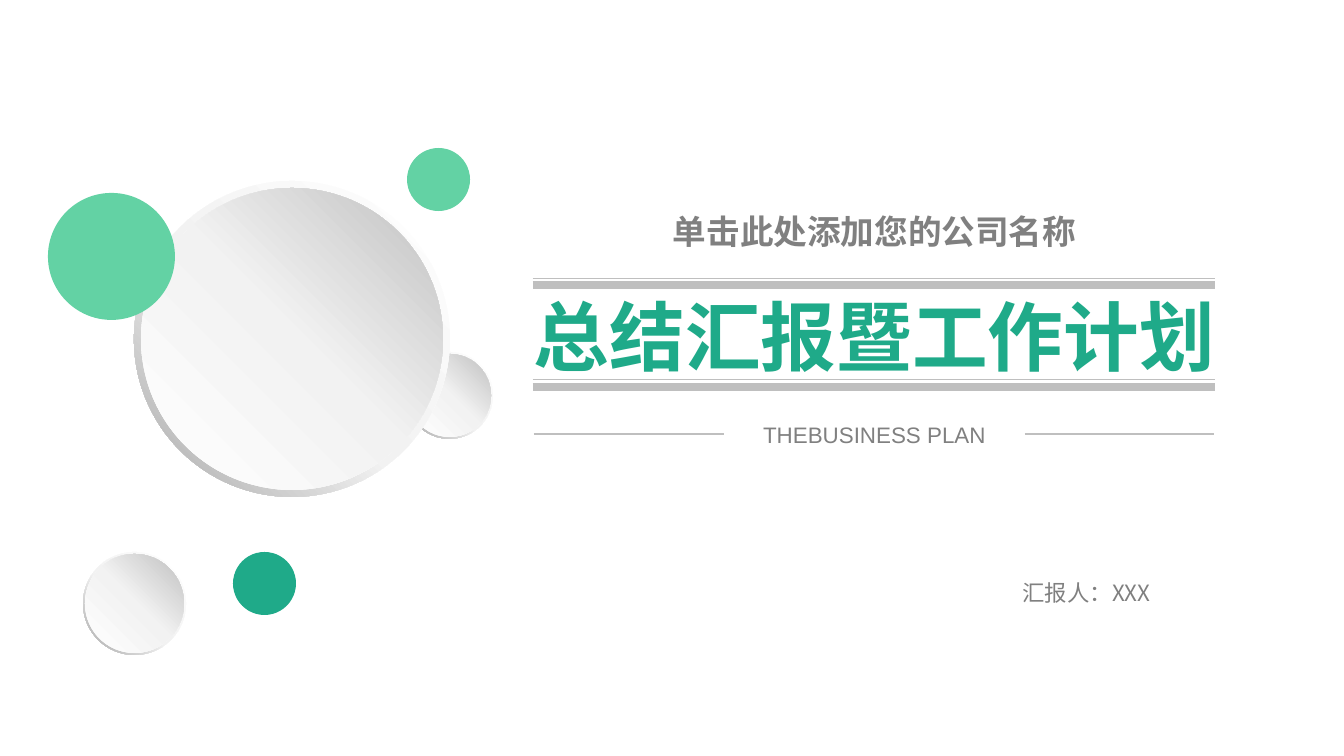
from copy import deepcopy

from pptx import Presentation
from pptx import util as u
from pptx.dml.color import RGBColor
from pptx.enum import shapes, text
from pptx.oxml.ns import qn
from lxml import etree

EMU_PER_PX = 914400 / 134.4
MINT, TEAL, GRAY, SILVER = "63D2A4", "1FAA89", "808080", "BFBFBF"
CJK_FONT = "Noto Sans CJK SC"
RIM_GRADIENT = ([(0, "FFFFFF"), (0.55, "F2F2F2"), (1, "A6A6A6")], 225)
FACE_GRADIENT = ([(0, "FFFFFF"), (0.51, "F2F2F2"), (1, "BFBFBF")], 45)
CIRCLES = [
    (407, 148, 63, MINT),
    (406, 352, 87, None),
    (134, 181, 316, None),
    (48, 193, 127, MINT),
    (83, 552, 103, None),
    (233, 552, 63, TEAL),
]
RULES = [
    (533, 1215, 279, 0.5),
    (533, 1215, 285, 4.5),
    (533, 1215, 380, 0.5),
    (533, 1215, 387, 4.5),
    (534, 724, 434, 1),
    (1025, 1214, 434, 1),
]


def px(length):
    return u.Emu(round(length * EMU_PER_PX))


def rgb(color):
    return RGBColor.from_string(color)


def fill_gradient(fill, gradient):
    stops, angle = gradient
    fill.gradient()
    fill.gradient_angle = angle
    stop_list = fill._fill._gradFill.find(qn("a:gsLst"))
    stop_list.append(deepcopy(stop_list[0]))
    for stop, (position, color) in zip(fill.gradient_stops, stops):
        stop.position = position
        stop.color.rgb = rgb(color)


def add_round(group, kind, left, top, size, color, gradient):
    shape = group.shapes.add_shape(kind, px(left), px(top), px(size), px(size))
    shape.shadow.inherit = False
    shape.line.fill.background()
    if color:
        shape.fill.solid()
        shape.fill.fore_color.rgb = rgb(color)
    else:
        fill_gradient(shape.fill, gradient)
    return shape


def add_circle(slide, left, top, size, color):
    group = slide.shapes.add_group_shape()
    rim = add_round(group, shapes.MSO_SHAPE.DONUT, left, top, size, color, RIM_GRADIENT)
    rim.adjustments[0] = 0.05
    inset = round(size * 0.021)
    add_round(group, shapes.MSO_SHAPE.OVAL, left + inset, top + inset,
              size - 2 * inset, color, FACE_GRADIENT)


def add_rule(slide, start, end, y, width):
    line = slide.shapes.add_connector(
        shapes.MSO_CONNECTOR.STRAIGHT, px(start), px(y), px(end), px(y))
    line.line.color.rgb = rgb(SILVER)
    line.line.width = u.Pt(width)
    etree.SubElement(line._element.spPr, qn("a:effectLst"))


def write_text(shape, words, size, color, font=CJK_FONT, bold=False, wrap=True):
    frame = shape.text_frame
    frame.auto_size = text.MSO_AUTO_SIZE.NONE
    frame.word_wrap = wrap
    frame.vertical_anchor = text.MSO_ANCHOR.MIDDLE
    frame.margin_left = frame.margin_right = 0
    frame.margin_top = frame.margin_bottom = 0
    frame.text = words
    paragraph = frame.paragraphs[0]
    paragraph.alignment = text.PP_ALIGN.CENTER
    paragraph.font.name = font
    paragraph.font.size = u.Pt(size)
    paragraph.font.bold = bold
    paragraph.font.color.rgb = rgb(color)
    properties = paragraph._p.pPr.find(qn("a:defRPr"))
    latin = properties.find(qn("a:latin"))
    east_asian = etree.Element(qn("a:ea"), typeface=font)
    latin.addnext(east_asian)


def add_label(slide, left, top, width, height, words, size, **style):
    box = slide.shapes.add_textbox(px(left), px(top), px(width), px(height))
    write_text(box, words, size, GRAY, **style)


def place_title(slide, left, top, width, height, words):
    title = slide.shapes.title
    title.left, title.top = px(left), px(top)
    title.width, title.height = px(width), px(height)
    write_text(title, words, 40.5, TEAL, bold=True)


def main():
    presentation = Presentation()
    presentation.slide_width = px(1344)
    presentation.slide_height = px(756)
    slide = presentation.slides.add_slide(presentation.slide_layouts[5])
    for circle in CIRCLES:
        add_circle(slide, *circle)
    for rule in RULES:
        add_rule(slide, *rule)
    place_title(slide, 450, 283, 849, 105, "总结汇报暨工作计划")
    add_label(slide, 628, 204, 493, 54, "单击此处添加您的公司名称", 18, bold=True)
    add_label(slide, 749, 415, 251, 40, "THEBUSINESS PLAN", 12, font="Arial", wrap=False)
    add_label(slide, 1006, 573, 161, 40, "汇报人：XXX", 12, wrap=False)
    presentation.save("out.pptx")


if __name__ == "__main__":
    main()
